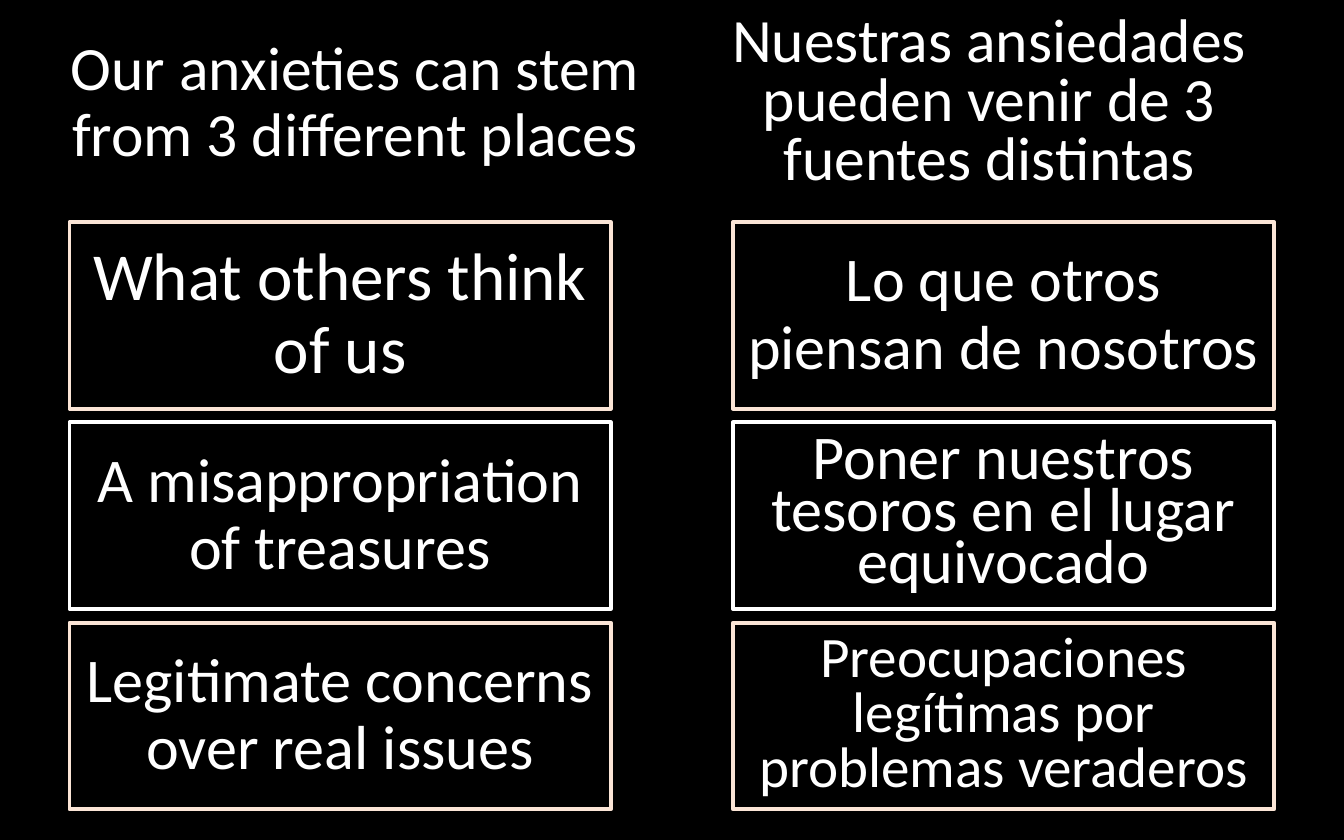
from pptx import Presentation
from pptx.dml.color import RGBColor
from pptx.enum.shapes import MSO_SHAPE
from pptx.enum.text import MSO_ANCHOR, MSO_AUTO_SIZE, PP_ALIGN
from pptx.util import Pt

BLACK = RGBColor(0x00, 0x00, 0x00)
WHITE = RGBColor(0xFF, 0xFF, 0xFF)
PEACH = RGBColor(0xFB, 0xE5, 0xD6)

FRAME = {"word_wrap": True, "auto_size": MSO_AUTO_SIZE.NONE,
         "vertical_anchor": MSO_ANCHOR.MIDDLE}
HEADING_BOX = (0, 348.5, 111)
CARD_TOP, CARD_W, CARD_H, CARD_PITCH = 119, 290, 100, 107.3
CARD_LINES = (PEACH, WHITE, PEACH)

ENGLISH = (
    ("What others think of us", 36, 0.9),
    ("A misappropriation of treasures", 33.3, 0.9),
    ("Legitimate concerns over real issues", 33.3, 0.9),
)
SPANISH = (
    ("Lo que otros piensan de nosotros", 33.3, 0.9),
    ("Poner nuestros tesoros en el lugar equivocado", 33.3, 0.7),
    ("Preocupaciones legítimas por problemas veraderos", 30.6, 0.8),
)


def set_attrs(obj, values):
    """Set each attribute of an object from a dict."""
    for name, value in values.items():
        setattr(obj, name, value)


def write(sp, text, size, spacing):
    """Fill a shape with one centred white paragraph."""
    tf = sp.text_frame
    set_attrs(tf, FRAME)
    p = tf.paragraphs[0]
    set_attrs(p, {"alignment": PP_ALIGN.CENTER, "line_spacing": spacing,
                  "space_before": Pt(0)})
    r = p.add_run()
    r.text = text
    set_attrs(r.font, {"name": "Calibri", "size": Pt(size)})
    r.font.color.rgb = WHITE


def add_heading(sp, left, text, spacing):
    """Place a column heading at the top of the slide."""
    top, width, height = HEADING_BOX
    set_attrs(sp, {"left": Pt(left), "top": Pt(top),
                   "width": Pt(width), "height": Pt(height)})
    write(sp, text, 33, spacing)


def add_cards(s, left, top, cards):
    """Stack outlined cards down from the given corner."""
    for i, ((text, size, spacing), color) in enumerate(zip(cards, CARD_LINES)):
        sp = s.shapes.add_shape(MSO_SHAPE.RECTANGLE, Pt(left),
                                Pt(top + i * CARD_PITCH), Pt(CARD_W), Pt(CARD_H))
        sp.shadow.inherit = False
        sp.fill.background()
        sp.line.color.rgb = color
        sp.line.width = Pt(2)
        write(sp, text, size, spacing)


def main():
    """Build the bilingual slide and save it."""
    prs = Presentation()
    set_attrs(prs, {"slide_width": Pt(720), "slide_height": Pt(450)})
    s = prs.slides.add_slide(prs.slide_layouts[5])
    s.background.fill.solid()
    s.background.fill.fore_color.rgb = BLACK
    add_heading(s.shapes.title, 16,
                "Our anxieties can stem from 3 different places", 0.9)
    add_heading(s.shapes.add_textbox(0, 0, 0, 0), 355.7,
                "Nuestras ansiedades pueden venir de 3 fuentes distintas", 0.8)
    add_cards(s, 37.2, CARD_TOP, ENGLISH)
    add_cards(s, 392.6, CARD_TOP, SPANISH)
    prs.save("out.pptx")


if __name__ == "__main__":
    main()
